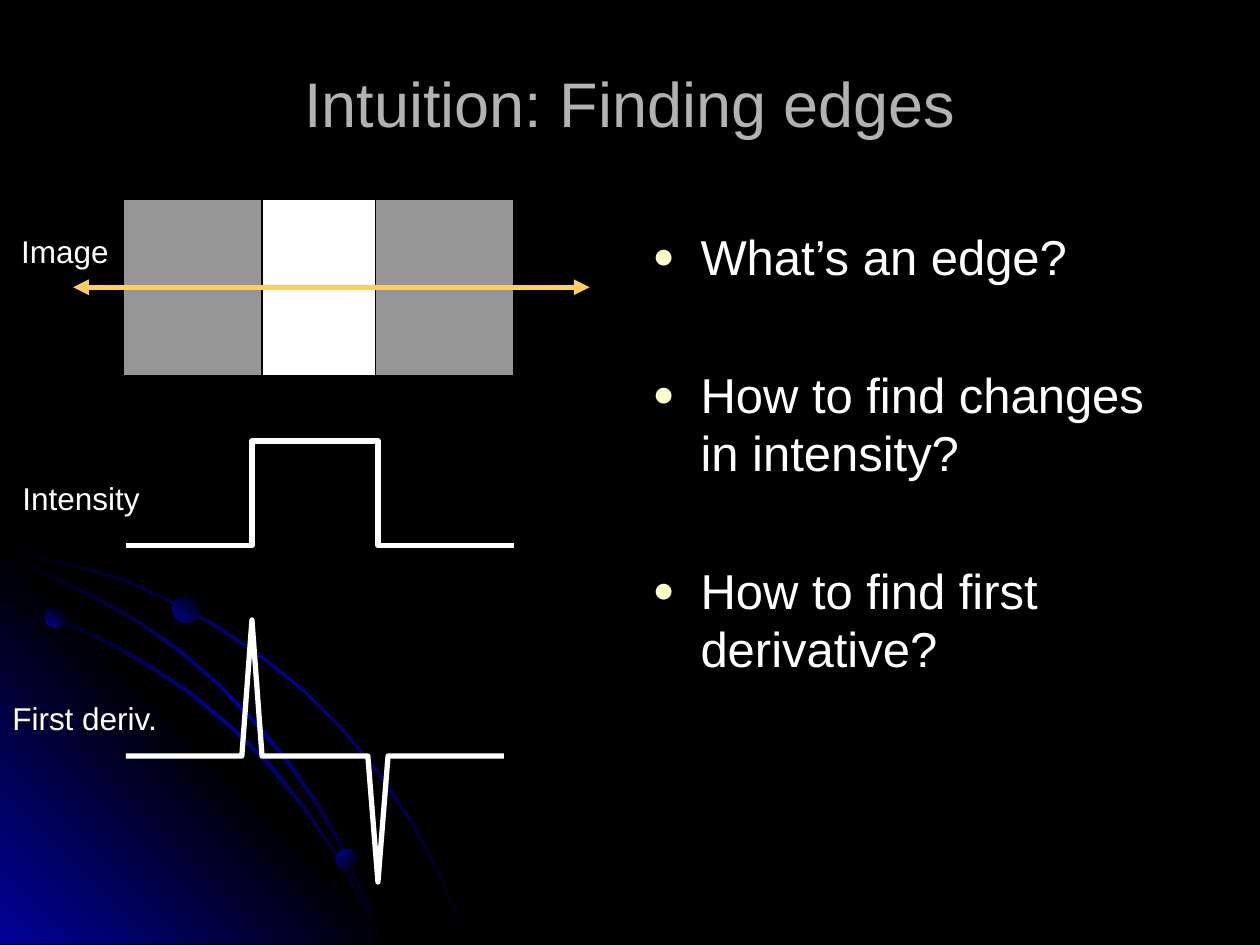
from lxml import etree
from pptx import Presentation
from pptx.dml.color import RGBColor
from pptx.enum.shapes import MSO_CONNECTOR, MSO_SHAPE
from pptx.enum.text import MSO_ANCHOR, MSO_AUTO_SIZE, PP_ALIGN
from pptx.oxml.ns import qn
from pptx.util import Inches, Pt

RECTANGLE, OVAL = MSO_SHAPE.RECTANGLE, MSO_SHAPE.OVAL
STRAIGHT = MSO_CONNECTOR.STRAIGHT
TOP, MIDDLE = MSO_ANCHOR.TOP, MSO_ANCHOR.MIDDLE
LEFT, CENTER = PP_ALIGN.LEFT, PP_ALIGN.CENTER
NO_AUTOFIT = MSO_AUTO_SIZE.NONE

COLORS = {
    "black": "000000", "blue": "010199", "white": "FFFFFF", "title": "B2B2B2",
    "gray": "969696", "scan": "FFCC66", "bullet": "FFFFCC",
}
FONT = "Arial"
TITLE = "Intuition: Finding edges"
QUESTIONS = [
    "What’s an edge?",
    "How to find changes in intensity?",
    "How to find first derivative?",
]
LABELS = [
    ("Image", 0.07, 1.79, 0.9),
    ("Intensity", 0.08, 3.75, 1.13),
    ("First deriv.", 0, 5.5, 1.37),
]
BANDS = [("gray", 0.98, 3.1), ("white", 2.08, 0.9)]
BAND_TOP, BAND_HEIGHT = 1.58, 1.4
SCAN_LEFT, SCAN_RIGHT = 0.58, 4.68
CURVES = [
    [(1, 4.33), (2, 4.33), (2, 3.5), (3, 3.5), (3, 4.33), (4.08, 4.33)],
    [(1, 6), (1.92, 6), (2, 4.92), (2.08, 6), (2.92, 6), (3, 7), (3.08, 6), (4, 6)],
]
ARC_STOPS = [(0, "black"), (50, "blue"), (100, "black")]
GLOW_STOPS = [(0, "blue"), (50, "black"), (100, "blue")]
DOT_STOPS = [(0, "blue"), (100, "black")]
OUTER_ARC = [
    (0.57, 4.47), (0.28, 4.41), (0, 4.35), (0, 4.38), (0.28, 4.43), (0.56, 4.49),
    (0.97, 4.61), (1.35, 4.78), (1.73, 4.99), (2.08, 5.23), (2.41, 5.49),
    (2.71, 5.79), (2.98, 6.12), (3.23, 6.49), (3.37, 6.73), (3.5, 6.98),
    (3.6, 7.23), (3.7, 7.49), (3.72, 7.49), (3.62, 7.23), (3.52, 6.98),
    (3.39, 6.73), (3.25, 6.48), (3, 6.11), (2.72, 5.78), (2.42, 5.48),
    (2.09, 5.21), (1.74, 4.97), (1.36, 4.77), (0.98, 4.59),
]
GLOW = [(3.22, 7.49), (0, 7.49), (0, 4.27)]
INNER_ARC = [
    (2.85, 7.14), (2.94, 7.32), (3.01, 7.49), (3.03, 7.49), (2.96, 7.3),
    (2.86, 7.12), (2.66, 6.76), (2.42, 6.4), (2.15, 6.06), (1.84, 5.76),
    (1.52, 5.49), (1.17, 5.26), (0.79, 5.05), (0.41, 4.88), (0, 4.75), (0, 4.77),
    (0.39, 4.9), (0.77, 5.07), (1.15, 5.28), (1.5, 5.51), (1.83, 5.78),
    (2.13, 6.08), (2.4, 6.41), (2.65, 6.77),
]
MIDDLE_ARC = [
    (0, 4.42), (0, 4.44), (0.36, 4.57), (0.74, 4.75), (1.09, 4.94), (1.42, 5.18),
    (1.73, 5.44), (2.02, 5.75), (2.27, 6.05), (2.52, 6.41), (2.67, 6.67),
    (2.8, 6.94), (2.92, 7.22), (3.01, 7.49), (3.03, 7.49), (2.94, 7.2),
    (2.82, 6.93), (2.69, 6.65), (2.54, 6.39), (2.29, 6.03), (2.04, 5.73),
    (1.75, 5.43), (1.44, 5.16), (1.11, 4.93), (0.76, 4.73), (0.39, 4.55),
]
SWEEPS = [
    (OUTER_ARC, ARC_STOPS, 45), (GLOW, GLOW_STOPS, 315),
    (INNER_ARC, ARC_STOPS, 45), (MIDDLE_ARC, ARC_STOPS, 45),
]
DOTS = [(0.36, 4.83, 0.15, 315), (2.67, 6.74, 0.16, 45), (1.37, 4.73, 0.21, 315)]


def rgb(name):
    return RGBColor.from_string(COLORS[name])


def set_values(target, values):
    for name, value in values.items():
        setattr(target, name, value)


def place(shape, *inches):
    names = ("left", "top", "width", "height")
    set_values(shape, dict(zip(names, map(Inches, inches))))


def add_xml(parent, tag, **attributes):
    return etree.SubElement(parent, qn(tag), attributes)


def fill_gradient(shape, stops, angle):
    shape.fill.gradient()
    shape.fill.gradient_angle = 360 - angle
    stop_list = shape.element.spPr.find(".//" + qn("a:gsLst"))
    for stop in list(stop_list):
        stop_list.remove(stop)
    for position, color in stops:
        stop = add_xml(stop_list, "a:gs", pos=str(position * 1000))
        add_xml(stop, "a:srgbClr", val=COLORS[color])
    shape.line.fill.background()
    shape.shadow.inherit = False


def draw_line(line, color, points):
    line.color.rgb = rgb(color)
    line.width = Pt(points)


def add_outline(slide, points, close):
    start, *others = [(Inches(x), Inches(y)) for x, y in points]
    builder = slide.shapes.build_freeform(*start)
    builder.add_line_segments(others, close=close)
    shape = builder.convert_to_shape()
    shape.shadow.inherit = False
    return shape


def write(para, text, size, color, **layout):
    span = para.add_run()
    span.text = text
    set_values(span.font, {"name": FONT, "size": Pt(size)})
    span.font.color.rgb = rgb(color)
    set_values(para, layout)


def add_backdrop(slide):
    slide.background.fill.solid()
    slide.background.fill.fore_color.rgb = rgb("black")
    for points, stops, angle in SWEEPS:
        fill_gradient(add_outline(slide, points, True), stops, angle)
    for left, top, size, angle in DOTS:
        dot = slide.shapes.add_shape(OVAL, *map(Inches, (left, top, size, size)))
        fill_gradient(dot, DOT_STOPS, angle)


def add_text(slide):
    title, body = slide.placeholders
    place(title, 0.5, 0.3, 9, 1.03)
    set_values(title.text_frame, {"vertical_anchor": MIDDLE, "auto_size": NO_AUTOFIT})
    write(title.text_frame.paragraphs[0], TITLE, 36, "title", alignment=CENTER)
    place(body, 5.08, 1.75, 4.42, 4.95)
    frame = body.text_frame
    set_values(frame, {"vertical_anchor": TOP, "auto_size": NO_AUTOFIT})
    for index, question in enumerate(QUESTIONS):
        para = frame.add_paragraph() if index else frame.paragraphs[0]
        write(para, question, 28, "white", alignment=LEFT, line_spacing=Pt(33.5),
              space_before=Pt(45 if index else 0))
        properties = para._p.get_or_add_pPr()
        properties.set("marL", str(Inches(0.38)))
        properties.set("indent", str(Inches(-0.38)))
        color = add_xml(properties, "a:buClr")
        add_xml(color, "a:srgbClr", val=COLORS["bullet"])
        add_xml(properties, "a:buSzPct", val="75000")
        add_xml(properties, "a:buChar", char="●")


def add_diagram(slide):
    for color, left, width in BANDS:
        band = slide.shapes.add_shape(
            RECTANGLE, *map(Inches, (left, BAND_TOP, width, BAND_HEIGHT)))
        band.shadow.inherit = False
        band.fill.solid()
        band.fill.fore_color.rgb = rgb(color)
        draw_line(band.line, "black", 0.75)
    scan_y = BAND_TOP + BAND_HEIGHT / 2
    scan = slide.shapes.add_connector(
        STRAIGHT, *map(Inches, (SCAN_LEFT, scan_y, SCAN_RIGHT, scan_y)))
    draw_line(scan.line, "scan", 3)
    outline = scan.element.spPr.find(qn("a:ln"))
    for end in ("a:headEnd", "a:tailEnd"):
        add_xml(outline, end, type="triangle")
    add_xml(scan.element.spPr, "a:effectLst")
    for points in CURVES:
        curve = add_outline(slide, points, False)
        curve.fill.background()
        draw_line(curve.line, "white", 3)
    for text, left, top, width in LABELS:
        box = slide.shapes.add_textbox(*map(Inches, (left, top, width, 0.4)))
        box.text_frame.word_wrap = False
        write(box.text_frame.paragraphs[0], text, 18, "white")


def main():
    """Build the edge-finding slide and save it."""
    deck = Presentation()
    set_values(deck, {"slide_width": Inches(10), "slide_height": Inches(7.5)})
    slide = deck.slides.add_slide(deck.slide_layouts[1])
    add_text(slide)
    add_backdrop(slide)
    add_diagram(slide)
    deck.save("out.pptx")


if __name__ == "__main__":
    main()
